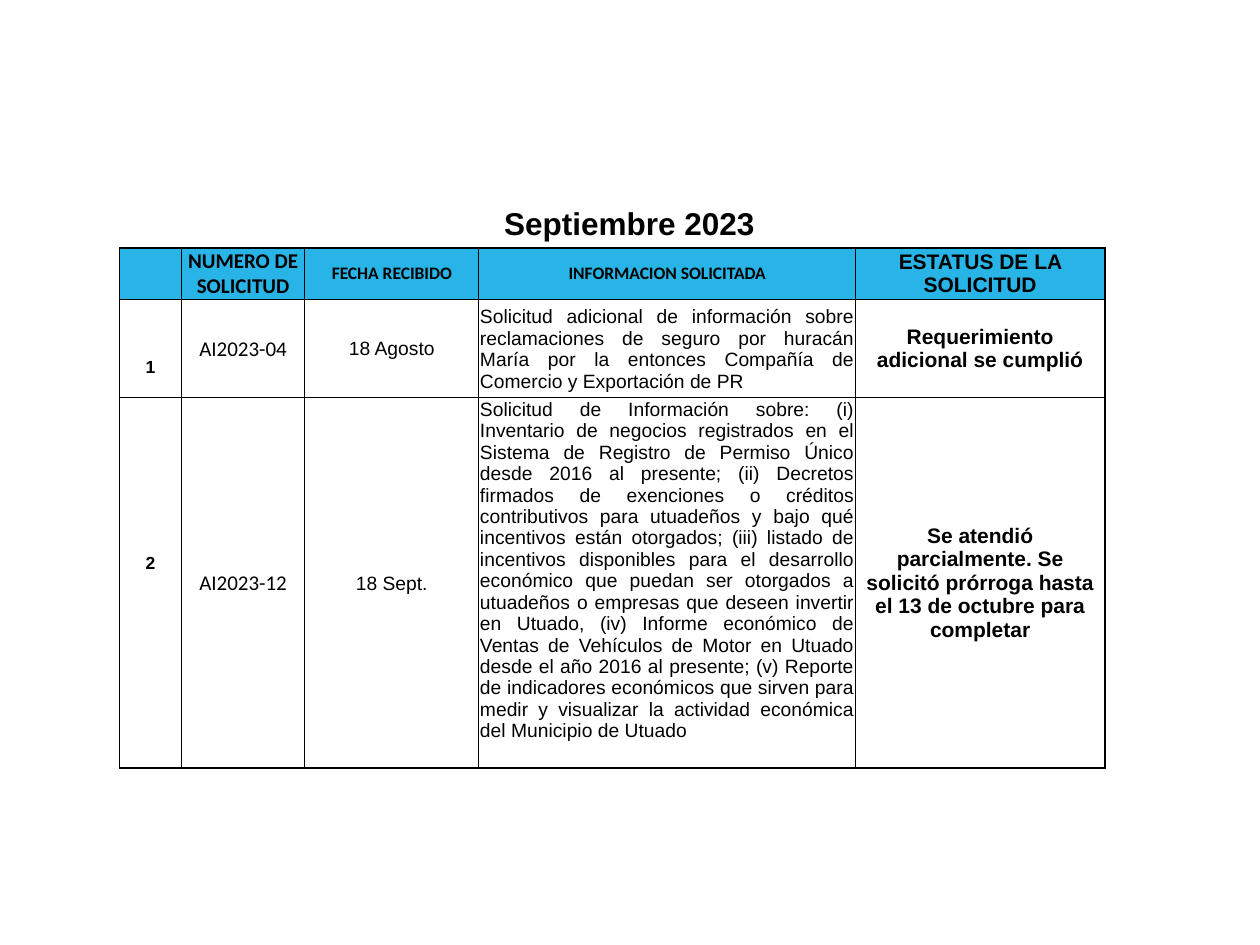
from dataclasses import dataclass

from lxml import etree
from pptx import Presentation
from pptx.dml.color import RGBColor
from pptx.enum.text import MSO_ANCHOR, PP_ALIGN
from pptx.oxml.ns import qn
from pptx.util import Inches, Pt

CENTER, JUSTIFY = PP_ALIGN.CENTER, PP_ALIGN.JUSTIFY
TOP, MIDDLE = MSO_ANCHOR.TOP, MSO_ANCHOR.MIDDLE
TITLE_ONLY = 5


@dataclass(frozen=True)
class Theme:
    ink: str = "000000"
    header_fill: str = "28B4E6"
    font: str = "Arial"
    alternate_font: str = "Calibri"
    title_size: float = 18
    large_size: float = 12
    body_size: float = 11
    small_size: float = 10
    thick_line: float = 1
    thin_line: float = 0.5


THEME = Theme()
WIDE_INSETS = (0.05, 0, 0.05, 0)
NARROW_INSETS = (0.01, 0.01, 0.01, 0)


def write_text(frame, text, *, size, font=THEME.font, bold=False, align=CENTER,
               anchor=MIDDLE, insets=WIDE_INSETS):
    """Fill a text frame with one formatted paragraph."""
    frame.word_wrap = True
    frame.vertical_anchor = anchor
    (frame.margin_left, frame.margin_top,
     frame.margin_right, frame.margin_bottom) = map(Inches, insets)
    paragraph = frame.paragraphs[0]
    paragraph.alignment = align
    run = paragraph.add_run()
    run.text = text
    run.font.name, run.font.size, run.font.bold = font, Pt(size), bold
    run.font.color.rgb = RGBColor.from_string(THEME.ink)


class SlideBuilder:
    def __init__(self, presentation, theme):
        self.theme = theme
        self.slide = presentation.slides.add_slide(
            presentation.slide_layouts[TITLE_ONLY])

    def title(self, text, left, top, width, height):
        shape = self.slide.shapes.title
        shape.left, shape.top = Inches(left), Inches(top)
        shape.width, shape.height = Inches(width), Inches(height)
        write_text(shape.text_frame, text, size=self.theme.title_size, bold=True)

    def border(self, cell, side, width):
        properties = cell._tc.get_or_add_tcPr()
        line = etree.SubElement(properties, qn(f"a:ln{side}"), w=str(Pt(width)))
        fill = etree.SubElement(line, qn("a:solidFill"))
        etree.SubElement(fill, qn("a:srgbClr"), val=self.theme.ink)

    def table(self, left, top, widths, heights, rows):
        """Add a table; each cell is (text, format) and the first row is a header."""
        theme = self.theme
        table = self.slide.shapes.add_table(
            len(heights), len(widths), Inches(left), Inches(top),
            Inches(sum(widths)), Inches(sum(heights))).table
        table.first_row = table.horz_banding = False
        for column, width in zip(table.columns, widths):
            column.width = Inches(width)
        for row, height in zip(table.rows, heights):
            row.height = Inches(height)

        last_row, last_column = len(heights) - 1, len(widths) - 1
        for r, row in enumerate(rows):
            for c, (text, style) in enumerate(row):
                cell = table.cell(r, c)
                # The frame and the status column have thick vertical lines
                thick = {"L": c in (0, last_column), "R": c >= last_column - 1,
                         "T": r == 0, "B": r == last_row}
                for side, is_thick in thick.items():
                    self.border(cell, side,
                                theme.thick_line if is_thick else theme.thin_line)
                if r == 0:
                    cell.fill.solid()
                    cell.fill.fore_color.rgb = RGBColor.from_string(theme.header_fill)
                else:
                    cell.fill.background()
                self.cell_text(cell, text, style)

    def cell_text(self, cell, text, style):
        insets = style.get("insets", WIDE_INSETS)
        if text:
            write_text(cell.text_frame, text, **style)
        # Cells keep their anchor and insets on the cell itself
        cell.vertical_anchor = style.get("anchor", MIDDLE)
        (cell.margin_left, cell.margin_top,
         cell.margin_right, cell.margin_bottom) = map(Inches, insets)


def request_row(number, number_offset, code, date, request, status,
                request_anchor=MIDDLE):
    """Return the five cells of one request."""
    body = {"size": THEME.body_size, "insets": NARROW_INSETS}
    return [
        (number, {"size": THEME.small_size, "bold": True, "anchor": TOP,
                  "insets": (0.05, number_offset, 0.05, 0)}),
        (code, {"size": THEME.large_size, "font": THEME.alternate_font,
                "insets": NARROW_INSETS}),
        (date, body),
        (request, {**body, "align": JUSTIFY, "anchor": request_anchor}),
        (status, {"size": THEME.large_size, "bold": True}),
    ]


def main():
    presentation = Presentation()
    presentation.slide_width, presentation.slide_height = Inches(10), Inches(7.5)
    builder = SlideBuilder(presentation, THEME)

    # Month
    builder.title("Septiembre 2023", 1.63, 1.57, 6.73, 0.4)

    # Requests received
    large = {"size": THEME.large_size, "bold": True}
    small = {"size": THEME.small_size, "bold": True, "font": THEME.alternate_font}
    header = [
        ("", small),
        ("NUMERO DE SOLICITUD", {**large, "font": THEME.alternate_font}),
        ("FECHA RECIBIDO", small),
        ("INFORMACION SOLICITADA", small),
        ("ESTATUS DE LA SOLICITUD", large),
    ]
    first = request_row(
        "1", 0.46, "AI2023-04", "18 Agosto",
        "Solicitud adicional de información sobre reclamaciones de seguro por "
        "huracán María por la entonces Compañía de Comercio y Exportación de PR",
        "Requerimiento adicional se cumplió")
    second = request_row(
        "2", 1.24, "AI2023-12", "18 Sept.",
        "Solicitud de Información sobre: (i) Inventario de negocios registrados "
        "en el Sistema de Registro de Permiso Único desde 2016 al presente; "
        "(ii) Decretos firmados de exenciones o créditos contributivos para "
        "utuadeños y bajo qué incentivos están otorgados; (iii) listado de "
        "incentivos disponibles para el desarrollo económico que puedan ser "
        "otorgados a utuadeños o empresas que deseen invertir en Utuado, "
        "(iv) Informe económico de Ventas de Vehículos de Motor en Utuado desde "
        "el año 2016 al presente; (v) Reporte de indicadores económicos que "
        "sirven para medir y visualizar la actividad económica del Municipio "
        "de Utuado",
        "Se atendió parcialmente. Se solicitó prórroga hasta el 13 de octubre "
        "para completar", request_anchor=TOP)
    builder.table(0.95, 1.97, [0.49, 0.98, 1.38, 2.99, 1.98], [0.4, 0.78, 2.94],
                  [header, first, second])

    presentation.save("out.pptx")


if __name__ == "__main__":
    main()
